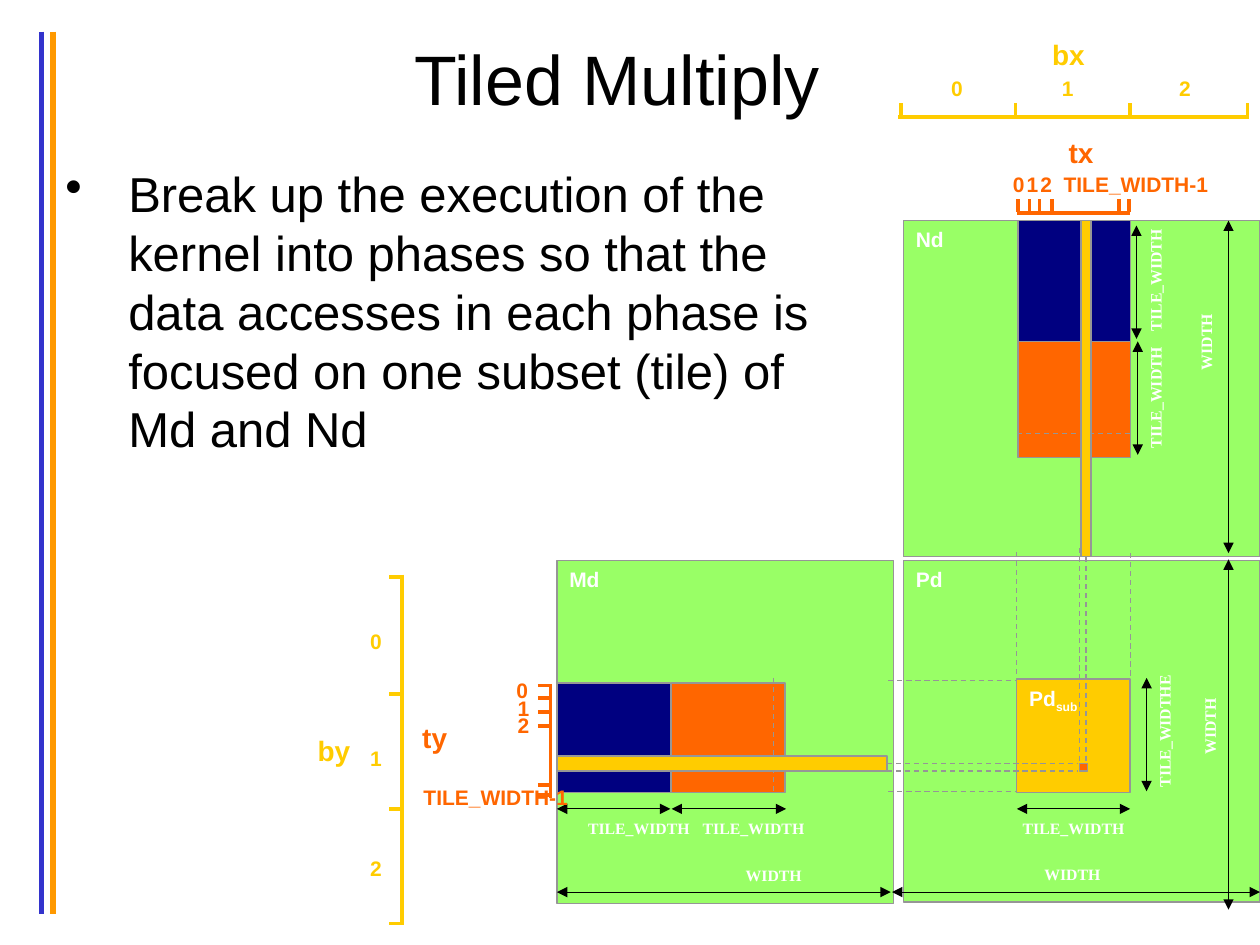
from dataclasses import dataclass

from lxml.etree import SubElement
from pptx import Presentation
from pptx.dml.color import RGBColor
from pptx.enum.dml import MSO_LINE
from pptx.enum.shapes import MSO_CONNECTOR, MSO_SHAPE
from pptx.enum.text import MSO_ANCHOR, PP_ALIGN
from pptx.oxml.ns import qn
from pptx.util import Inches, Pt


@dataclass(frozen=True)
class Theme:
    """Colours, fonts and type sizes of the slide."""
    black: str = "000000"
    white: str = "FFFFFF"
    grey: str = "969696"
    green: str = "99FF66"
    navy: str = "000080"
    orange: str = "FF6600"
    gold: str = "FFCC00"
    rule_blue: str = "3333CC"
    rule_orange: str = "FF9900"
    sans: str = "Arial"
    serif: str = "Times New Roman"
    title: int = 40
    body: int = 28
    axis: int = 16
    index: int = 12
    measure: int = 9


T = Theme()


def style_run(r, size, color, bold=True, font=T.sans):
    """Set the font of a run."""
    r.font.name, r.font.size, r.font.bold = font, Pt(size), bold
    r.font.color.rgb = RGBColor.from_string(color)


def add_text(s, box, text, size, color, bold=True, font=T.sans,
             align=PP_ALIGN.CENTER, wrap=False, inset=True):
    """Add a one-paragraph text box and return it."""
    sp = s.shapes.add_textbox(*map(Inches, box))
    tf = sp.text_frame
    tf.word_wrap = wrap
    if not inset:
        tf.margin_left = tf.margin_right = tf.margin_top = tf.margin_bottom = 0
    p = tf.paragraphs[0]
    p.text, p.alignment = text, align
    style_run(p.runs[0], size, color, bold, font)
    return sp


def add_block(s, box, fill, name="", sub=""):
    """Add a matrix, tile or strip, named in its top left corner."""
    sp = s.shapes.add_shape(MSO_SHAPE.RECTANGLE, *map(Inches, box))
    sp.shadow.inherit = False
    sp.fill.solid()
    sp.fill.fore_color.rgb = RGBColor.from_string(fill)
    sp.line.color.rgb = RGBColor.from_string(T.grey)
    sp.line.width = Pt(0.75)
    tf = sp.text_frame
    tf.vertical_anchor = MSO_ANCHOR.TOP
    p = tf.paragraphs[0]
    p.alignment = PP_ALIGN.LEFT
    for text in filter(None, (name, sub)):
        r = p.add_run()
        r.text = text
        style_run(r, T.index, T.white)
    if sub:
        p.runs[-1].font._element.set("baseline", "-25000")


def add_line(s, x1, y1, x2, y2, color, width):
    """Add a straight line and return it."""
    c = s.shapes.add_connector(MSO_CONNECTOR.STRAIGHT, *map(Inches, (x1, y1, x2, y2)))
    c.line.color.rgb = RGBColor.from_string(color)
    c.line.width = Pt(width)
    SubElement(c._element.spPr, qn("a:effectLst"))
    return c


def add_guide(s, *ends):
    """Add a dashed grey guide line."""
    add_line(s, *ends, T.grey, 0.75).line.dash_style = MSO_LINE.DASH


def add_arrow(s, *ends):
    """Add a double-headed measuring arrow."""
    ln = add_line(s, *ends, T.black, 0.5).line._get_or_add_ln()
    for tag in ("a:headEnd", "a:tailEnd"):
        SubElement(ln, qn(tag), type="triangle")


def add_measure(s, cx, cy, text, upright=False):
    """Add a dimension label around a centre point."""
    width = 0.09 * len(text)
    sp = add_text(s, (cx - width / 2, cy - 0.08, width, 0.15), text, T.measure,
                  T.white, font=T.serif, inset=False)
    if upright:
        sp.rotation = 270


def add_ruler(s, start, end, at, ticks, color, vertical=False):
    """Add an index ruler with ticks on its upper or left side."""
    lines = [(start, at, end, at)] + [(t, at - 0.11, t, at - 0.01) for t in ticks]
    if vertical:
        lines = [(at, start, at, end)] + [(at - 0.1, t, at, t) for t in ticks]
    for line in lines:
        add_line(s, *line, color, 2)


def add_indices(s, spots, color):
    """Add the numbers 0, 1, 2 at the given top left corners."""
    for i, (x, y) in enumerate(spots):
        add_text(s, (x, y, 0.26, 0.3), str(i), T.index, color)


def add_matrices(s):
    """Add the matrices, their tiles, guides, arrows and labels."""
    add_block(s, (4.42, 4.45, 2.67, 2.72), T.green, "Md")
    add_block(s, (5.33, 5.42, 0.9, 0.87), T.orange)
    add_block(s, (7.17, 1.75, 2.83, 2.67), T.green, "Nd")
    add_block(s, (8.08, 2.67, 0.89, 0.96), T.orange)
    add_block(s, (7.17, 4.45, 2.83, 2.71), T.green, "Pd")
    add_block(s, (8.07, 5.39, 0.9, 0.9), T.gold, "Pd", "sub")
    for x, top, bottom in ((8.07, 4.38, 5.38), (8.97, 4.39, 5.39), (8.57, 4.35, 6.05),
                           (8.62, 4.35, 6.06), (6.14, 5.38, 6.28)):
        add_guide(s, x, top, x, bottom)
    for y, left, right in ((5.4, 7.05, 8.07), (6.28, 7.05, 8.07), (3.44, 8.07, 8.97),
                           (6.06, 7.04, 8.55), (6.12, 7.04, 8.55)):
        add_guide(s, left, y, right, y)
    add_block(s, (8.57, 6.06, 0.06, 0.06), T.orange)
    for x, top, bottom in ((9.75, 1.75, 4.39), (9.75, 4.44, 7.22), (9.1, 5.38, 6.28),
                           (9.02, 1.79, 2.69), (9.03, 2.71, 3.61)):
        add_arrow(s, x, top, x, bottom)
    for y, left, right in ((7.08, 4.42, 7.07), (7.08, 7.08, 10), (6.42, 4.42, 5.32),
                           (6.42, 5.33, 6.24), (6.42, 8.07, 8.97)):
        add_arrow(s, left, y, right, y)
    for cx in (5.07, 5.98, 8.52):
        add_measure(s, cx, 6.58, "TILE_WIDTH")
    for cx, cy in ((6.14, 6.95), (8.51, 6.94)):
        add_measure(s, cx, cy, "WIDTH")
    for cx, cy, text in ((9.17, 2.23, "TILE_WIDTH"), (9.17, 3.16, "TILE_WIDTH"),
                         (9.24, 5.81, "TILE_WIDTHE"), (9.6, 5.77, "WIDTH"),
                         (9.57, 2.72, "WIDTH")):
        add_measure(s, cx, cy, text, upright=True)
    add_block(s, (4.42, 5.42, 0.9, 0.87), T.navy)
    add_block(s, (8.08, 1.75, 0.89, 0.96), T.navy)
    add_block(s, (4.42, 6, 2.62, 0.12), T.gold)
    add_block(s, (8.58, 1.75, 0.08, 2.67), T.gold)


def add_axes(s):
    """Add the block and thread index rulers."""
    add_ruler(s, 7.13, 9.91, 0.93, (7.15, 8.06, 8.97, 9.9), T.gold)
    add_ruler(s, 8.07, 8.97, 1.69, (8.08, 8.17, 8.25, 8.35, 8.88, 8.96), T.orange)
    add_ruler(s, 4.56, 7.34, 3.19, (4.58, 5.51, 6.42, 7.33), T.gold, vertical=True)
    add_ruler(s, 5.43, 6.33, 4.37, (5.44, 5.54, 5.65, 5.76, 6.23, 6.31), T.orange,
              vertical=True)
    add_indices(s, [(x, 0.55) for x in (7.45, 8.33, 9.26)], T.gold)
    add_indices(s, [(x, 1.31) for x in (7.94, 8.05, 8.16)], T.orange)
    add_indices(s, [(2.84, y) for y in (4.94, 5.87, 6.74)], T.gold)
    add_indices(s, [(4, 5.33), (4.01, 5.47), (4.01, 5.61)], T.orange)
    for text, x, y, color in (("bx", 8.25, 0.25, T.gold), ("tx", 8.38, 1.03, T.orange),
                              ("by", 2.42, 5.77, T.gold), ("ty", 3.25, 5.67, T.orange)):
        add_text(s, (x, y, 0.46 if color == T.gold else 0.4, 0.37), text, T.axis, color)
    for x, y in ((8.34, 1.31), (3.26, 6.18)):
        add_text(s, (x, y, 1.35, 0.3), "TILE_WIDTH-1", T.index, T.orange)


def add_heading(s):
    """Add the title and the bulleted statement."""
    sp = add_text(s, (0.5, 0.3, 8.79, 0.63), "Tiled Multiply", T.title, T.black,
                  bold=False, wrap=True)
    sp.text_frame.vertical_anchor = MSO_ANCHOR.MIDDLE
    sp = add_text(s, (0.42, 1.25, 6.33, 5.6),
                  "Break up the execution of the kernel into phases so that the data "
                  "accesses in each phase is focused on one subset (tile) of Md and Nd",
                  T.body, T.black, bold=False, align=PP_ALIGN.LEFT, wrap=True)
    pPr = sp.text_frame.paragraphs[0]._p.get_or_add_pPr()
    pPr.set("marL", str(Inches(0.5)))
    pPr.set("indent", str(Inches(-0.5)))
    SubElement(pPr, qn("a:buChar"), char="•")


def main():
    """Build and save the slide."""
    prs = Presentation()
    prs.slide_width, prs.slide_height = Inches(10), Inches(7.5)
    s = prs.slides.add_slide(prs.slide_layouts[6])
    for x, color in ((0.33, T.rule_blue), (0.42, T.rule_orange)):
        add_line(s, x, 0.25, x, 7.25, color, 3)
    add_matrices(s)
    add_axes(s)
    add_heading(s)
    prs.save("out.pptx")


if __name__ == "__main__":
    main()
